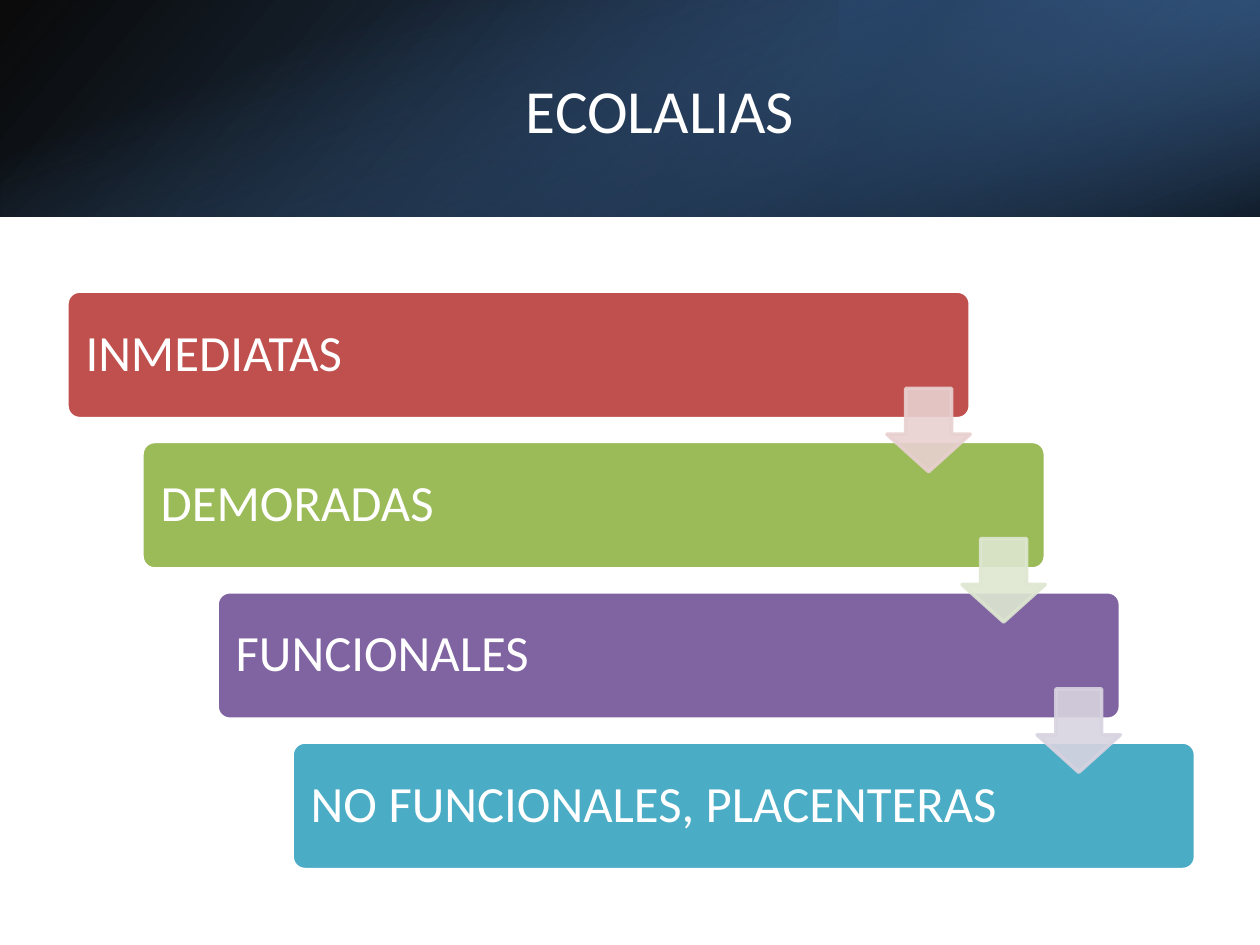
from lxml.etree import SubElement
from pptx import Presentation
from pptx.dml.color import RGBColor
from pptx.enum.shapes import MSO_SHAPE
from pptx.enum.text import MSO_ANCHOR, PP_ALIGN
from pptx.oxml.ns import qn
from pptx.util import Cm, Pt

COLORS = {
    "white": "FFFFFF", "black": "000000",
    "navy": "254061", "steel": "376092", "blue": "4F81BD",
    "red": "C0504D", "green": "9BBB59", "purple": "8064A2", "aqua": "4BACC6",
    "pale red": "E8D0D0", "pale green": "DEE7D1", "pale purple": "D8D3E0",
}
FONT = "Calibri"
SLIDE_WIDTH, SLIDE_HEIGHT = 25.4, 19.05
HEADER_HEIGHT = 4.37

# label, bar colour, colour of the arrow to the next bar
STEPS = [
    ("INMEDIATAS", "red", "pale red"),
    ("DEMORADAS", "green", "pale green"),
    ("FUNCIONALES", "purple", "pale purple"),
    ("NO FUNCIONALES, PLACENTERAS", "aqua", None),
]


def rgb(name):
    return RGBColor.from_string(COLORS[name])


def add_plain_shape(slide, kind, left, top, width, height):
    shape = slide.shapes.add_shape(kind, Cm(left), Cm(top), Cm(width), Cm(height))
    shape.shadow.inherit = False
    return shape


def set_opacities(shape, percents):
    """Give the shape's colours, in document order, their opacities."""
    for color, percent in zip(shape.element.spPr.iter(qn("a:srgbClr")), percents):
        SubElement(color, qn("a:alpha"), val=str(percent * 1000))


def style_text(paragraph, size, alignment):
    paragraph.alignment = alignment
    paragraph.font.name = FONT
    paragraph.font.size = Pt(size)
    paragraph.font.color.rgb = rgb("white")


def add_gradient_panel(slide, box, stops, angle, rotation=0, flipped=False):
    """Stops are (position, colour, opacity in percent); the angle is clockwise."""
    panel = add_plain_shape(slide, MSO_SHAPE.RECTANGLE, *box)
    panel.line.fill.background()
    panel.rotation = rotation
    if flipped:
        panel.element.spPr.find(qn("a:xfrm")).set("flipH", "1")
    panel.fill.gradient()
    panel.fill.gradient_angle = 360 - angle
    for stop, (position, color, _) in zip(panel.fill.gradient_stops, stops):
        stop.position = position
        stop.color.rgb = rgb(color)
    set_opacities(panel, [opacity for _, _, opacity in stops])
    return panel


def add_header(slide, left, top, width, height):
    third = width / 3
    offset = (width - height) / 2
    panels = [
        add_gradient_panel(slide, (left, top, width, height),
                           [(0, "black", 96), (1, "steel", 100)], 140, flipped=True),
        add_gradient_panel(slide, (left + width - third, top, third, height),
                           [(0.19, "navy", 68), (1, "blue", 79)], 320, 180, True),
        add_gradient_panel(slide, (left + offset, top - offset, height, width),
                           [(0.23, "blue", 0), (0.99, "black", 74)], 340, 90),
    ]
    title = slide.shapes.title
    for panel in panels:
        title.element.addprevious(panel.element)

    title.left, title.top = Cm(left + 2.84), Cm(top + 0.97)
    title.width, title.height = Cm(20.93), Cm(2.44)
    title.text_frame.text = "ECOLALIAS"
    title.text_frame.vertical_anchor = MSO_ANCHOR.MIDDLE
    style_text(title.text_frame.paragraphs[0], 35, PP_ALIGN.CENTER)


def add_bar(slide, label, color, left, top, width, height):
    bar = add_plain_shape(slide, MSO_SHAPE.ROUNDED_RECTANGLE, left, top, width, height)
    bar.adjustments[0] = 0.1
    bar.fill.solid()
    bar.fill.fore_color.rgb = rgb(color)
    bar.line.color.rgb = rgb("white")
    bar.line.width = Pt(2)
    frame = bar.text_frame
    frame.text = label
    frame.word_wrap = True
    frame.vertical_anchor = MSO_ANCHOR.MIDDLE
    frame.margin_left = frame.margin_right = Cm(0.3)
    paragraph = frame.paragraphs[0]
    paragraph.line_spacing = 0.9
    style_text(paragraph, 29, PP_ALIGN.LEFT)


def add_arrow(slide, color, left, top, size):
    arrow = add_plain_shape(slide, MSO_SHAPE.DOWN_ARROW, left, top, size, size)
    arrow.adjustments[0], arrow.adjustments[1] = 0.55, 0.45
    arrow.fill.solid()
    arrow.fill.fore_color.rgb = rgb(color)
    arrow.line.color.rgb = rgb(color)
    arrow.line.width = Pt(2)
    set_opacities(arrow, [90, 90])


def add_staircase(slide, left, top, width, height):
    """Equal bars stepping down to the right, with an arrow between neighbours."""
    bar_width, bar_height, arrow_size = 18.21, 2.57, 1.68
    step_x = (width - bar_width) / (len(STEPS) - 1)
    step_y = (height - bar_height) / (len(STEPS) - 1)
    corners = [(left + i * step_x, top + i * step_y) for i in range(len(STEPS))]
    for (label, color, _), (x, y) in zip(STEPS, corners):
        add_bar(slide, label, color, x, y, bar_width, bar_height)
    for (_, _, color), (x, y) in zip(STEPS, corners):
        if color:
            add_arrow(slide, color, x + bar_width - arrow_size, y + 1.96, arrow_size)


def main():
    presentation = Presentation()
    presentation.slide_width = Cm(SLIDE_WIDTH)
    presentation.slide_height = Cm(SLIDE_HEIGHT)
    slide = presentation.slides.add_slide(presentation.slide_layouts[5])
    add_header(slide, 0, 0, SLIDE_WIDTH, HEADER_HEIGHT)
    add_staircase(slide, 1.35, 5.87, 22.75, 11.66)
    presentation.save("out.pptx")


if __name__ == "__main__":
    main()
